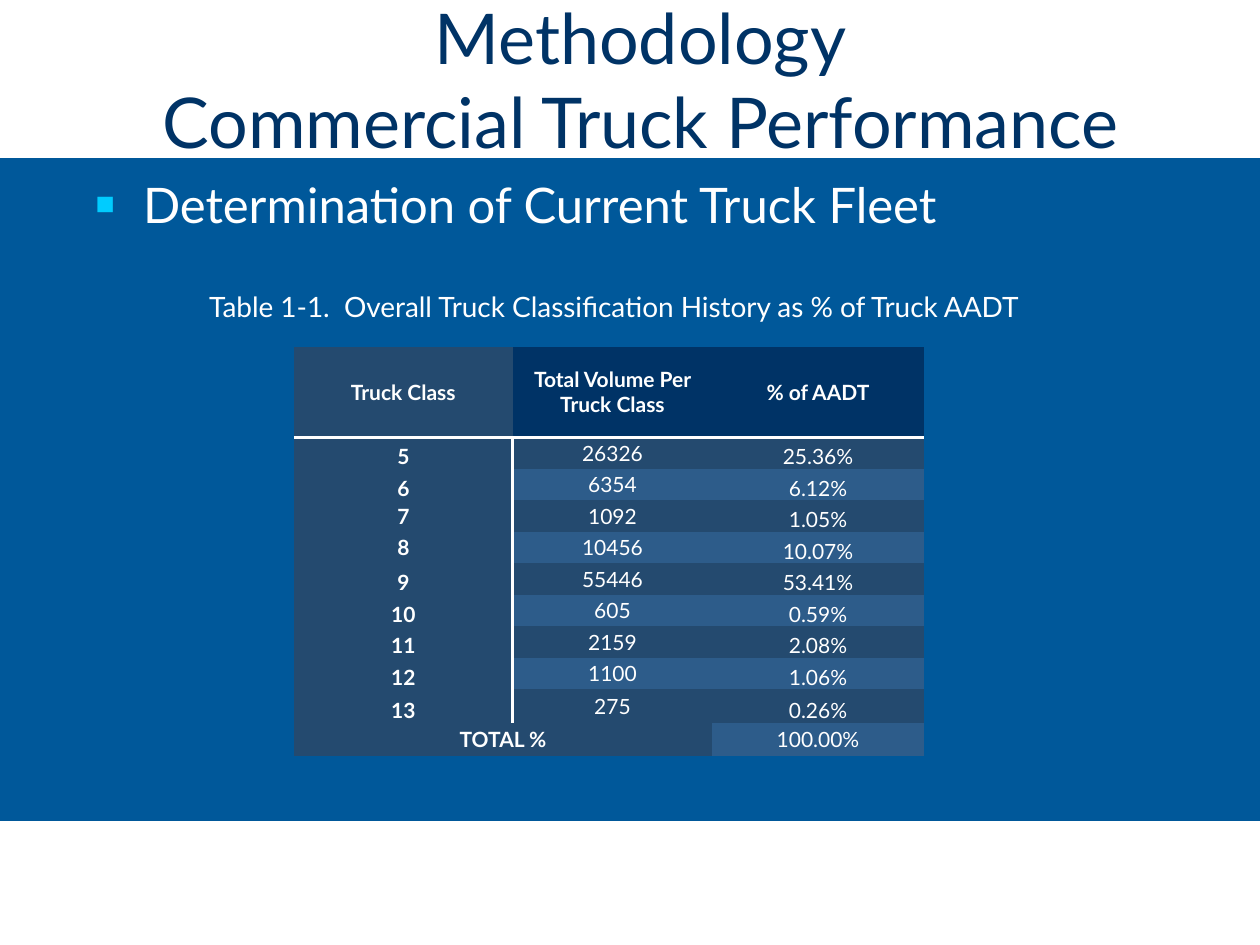
from lxml.etree import SubElement
from pptx import Presentation
from pptx.dml.color import RGBColor
from pptx.enum.shapes import MSO_SHAPE
from pptx.enum.text import MSO_ANCHOR, MSO_AUTO_SIZE, PP_ALIGN
from pptx.oxml import parse_xml
from pptx.oxml.ns import nsdecls, qn
from pptx.util import Pt

WHITE = RGBColor(0xFF, 0xFF, 0xFF)
NAVY = RGBColor(0x00, 0x33, 0x66)
BLUE = RGBColor(0x00, 0x58, 0x9A)
CYAN = RGBColor(0x00, 0xCC, 0xFF)
DARK_BAND = RGBColor(0x24, 0x4A, 0x6F)
LIGHT_BAND = RGBColor(0x2D, 0x5C, 0x8A)
NO_STYLE = "{2D5ABB26-0587-4C30-8999-92F81FD0307C}"


def style(paragraph, size, color=WHITE, bold=False):
    paragraph.font.name = "Lato"
    paragraph.font.size = Pt(size)
    paragraph.font.color.rgb = color
    paragraph.font.bold = bold


def add_border(cell, side):
    cell._tc.get_or_add_tcPr().insert(0, parse_xml(
        f'<a:{side} {nsdecls("a")} w="{Pt(2)}"><a:solidFill>'
        f'<a:srgbClr val="{WHITE}"/></a:solidFill></a:{side}>'))


prs = Presentation()
prs.slide_width, prs.slide_height = Pt(720), Pt(540)
slide = prs.slides.add_slide(prs.slide_layouts[1])
slide.background.fill.solid()
slide.background.fill.fore_color.rgb = BLUE

for top, height in ((0, 90), (469.5, 70.5)):
    band = slide.shapes.add_shape(MSO_SHAPE.RECTANGLE, Pt(0), Pt(top), Pt(720), Pt(height))
    band.shadow.inherit = False
    band.fill.solid()
    band.fill.fore_color.rgb = WHITE
    band.line.color.rgb = WHITE
    band.line.width = Pt(0.75)
    slide.shapes._spTree.insert(2, band._element)

title = slide.shapes.title
title.left, title.top, title.width, title.height = Pt(24), Pt(15), Pt(684), Pt(60)
title.text_frame.text = "Methodology\vCommercial Truck Performance"
title.text_frame.auto_size = MSO_AUTO_SIZE.NONE
title.text_frame.vertical_anchor = MSO_ANCHOR.MIDDLE
title.text_frame.paragraphs[0].alignment = PP_ALIGN.CENTER
style(title.text_frame.paragraphs[0], 40, NAVY)

topic = slide.placeholders[1]
topic.left, topic.top, topic.width, topic.height = Pt(47.5), Pt(96), Pt(648), Pt(396)
topic.text_frame.text = "Determination of Current Truck Fleet"
topic.text_frame.auto_size = MSO_AUTO_SIZE.NONE
topic_line = topic.text_frame.paragraphs[0]
topic_line.space_before = Pt(0)
topic_props = topic_line._p.get_or_add_pPr()
topic_props.set("marL", str(Pt(27)))
topic_props.set("indent", str(Pt(-27)))
bullet_color = SubElement(topic_props, qn("a:buClr"))
SubElement(bullet_color, qn("a:srgbClr"), val=str(CYAN))
SubElement(topic_props, qn("a:buSzPct"), val="65000")
SubElement(topic_props, qn("a:buChar"), char="■")
style(topic_line, 28)

header = ("Truck Class", "Total Volume Per Truck Class", "% of AADT")
classes = (
    ("5", "26326", "25.36%"),
    ("6", "6354", "6.12%"),
    ("7", "1092", "1.05%"),
    ("8", "10456", "10.07%"),
    ("9", "55446", "53.41%"),
    ("10", "605", "0.59%"),
    ("11", "2159", "2.08%"),
    ("12", "1100", "1.06%"),
    ("13", "275", "0.26%"),
)
rows = (header, *classes, ("TOTAL %", "", "100.00%"))
total_row = len(rows) - 1

history_frame = slide.shapes.add_table(len(rows), 3, Pt(168), Pt(198), Pt(360), Pt(234))
history = history_frame.table
history._tbl.tblPr.find(qn("a:tableStyleId")).text = NO_STYLE
for column, width in zip(history.columns, (125, 114, 121)):
    column.width = Pt(width)
for row, height in zip(history.rows, (52, *[18] * 8, 19, 19)):
    row.height = Pt(height)
history.cell(total_row, 0).merge(history.cell(total_row, 1))

for r, values in enumerate(rows):
    for c, value in enumerate(values):
        cell = history.cell(r, c)
        cell.fill.solid()
        if c == 0:
            cell.fill.fore_color.rgb = DARK_BAND
        elif r == 0:
            cell.fill.fore_color.rgb = NAVY
        else:
            cell.fill.fore_color.rgb = DARK_BAND if r % 2 else LIGHT_BAND
        if r == 0:
            add_border(cell, "lnB")
        elif c == 0 and r < total_row:
            add_border(cell, "lnR")
        cell.margin_left = cell.margin_right = Pt(5)
        cell.margin_top = cell.margin_bottom = Pt(0)
        at_middle = r in (0, total_row) or c == 1 or value in ("7", "8")
        cell.vertical_anchor = MSO_ANCHOR.MIDDLE if at_middle else MSO_ANCHOR.BOTTOM
        cell.text = value
        cell.text_frame.paragraphs[0].alignment = PP_ALIGN.CENTER
        style(cell.text_frame.paragraphs[0], 12, bold=r == 0 or c == 0)

caption = slide.shapes.add_textbox(Pt(112.5), Pt(162), Pt(493), Pt(48))
caption.text_frame.word_wrap = False
caption.text_frame.text = "Table 1-1.  Overall Truck Classification History as % of Truck AADT"
style(caption.text_frame.paragraphs[0], 16)

prs.save("out.pptx")
